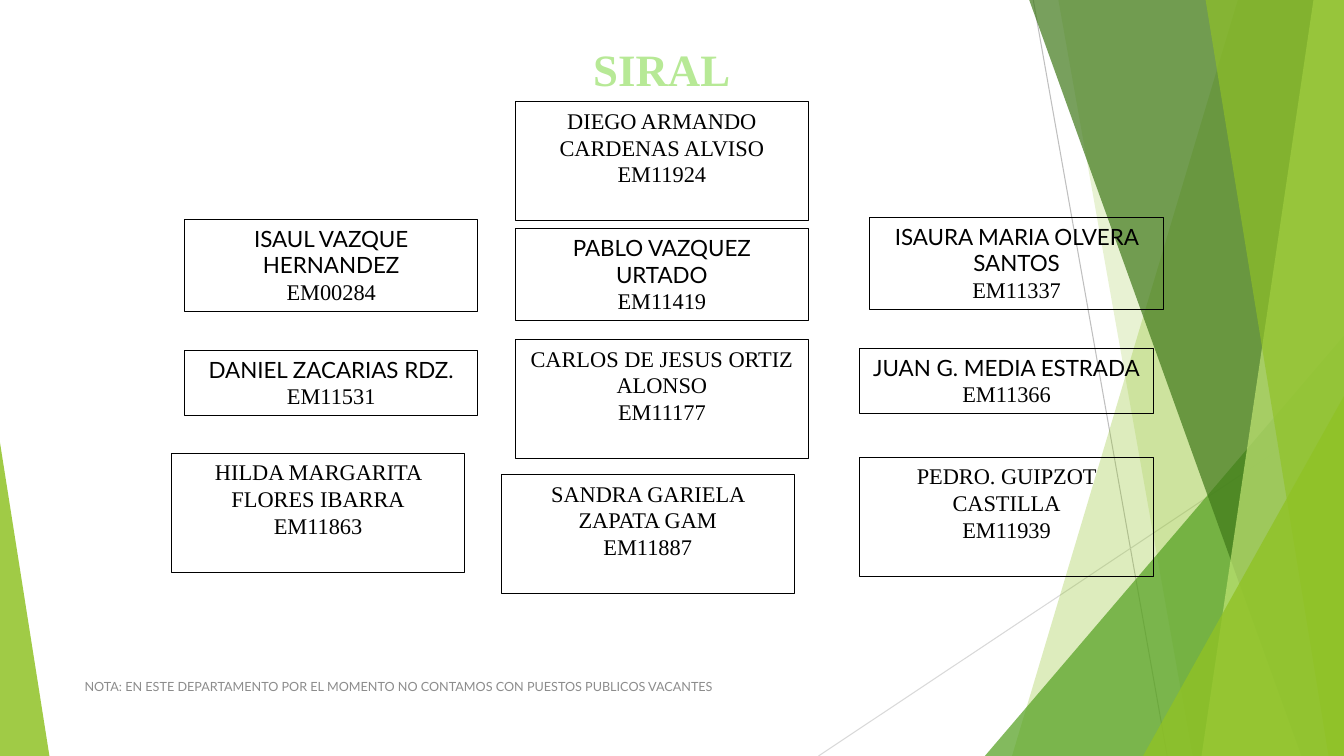
from dataclasses import dataclass

from lxml.etree import SubElement
from pptx import Presentation
from pptx.dml.color import RGBColor
from pptx.enum.shapes import MSO_CONNECTOR, MSO_SHAPE
from pptx.enum.text import MSO_ANCHOR, MSO_AUTO_SIZE, PP_ALIGN
from pptx.oxml.ns import qn
from pptx.shapes.autoshape import Shape
from pptx.slide import Slide
from pptx.text.text import TextFrame, _Paragraph
from pptx.util import Emu, Inches, Pt

WIDTH, HEIGHT = Inches(13.33), Inches(7.5)
SANS, SERIF = "Lato", "Times New Roman"
COLORS = {
    "lime": "90C226",
    "pale": "C0E474",
    "green": "54A021",
    "forest": "3F7819",
    "title": "B7E996",
    "note": "8C8C8C",
    "black": "000000",
    "gray": "BFBFBF",
    "silver": "D9D9D9",
}
CARD_WIDTH = 21.83
SHORT, MEDIUM, TALL = 8.53, 12.13, 15.73


@dataclass(frozen=True)
class Ray:
    start: tuple[float, float]
    end: tuple[float, float]
    color: str


@dataclass(frozen=True)
class Band:
    top_left: float
    bottom_left: float
    color: str
    opacity: int


@dataclass(frozen=True)
class Wedge:
    left: float
    top: float
    width: float
    apex: float
    color: str
    opacity: int


@dataclass(frozen=True)
class Card:
    left: float
    top: float
    height: float
    name: str
    code: str
    font: str


RAYS = [
    Ray((76.88, 0), (86.85, 100), "gray"),
    Ray((100, 53.73), (60.9, 100), "silver"),
]
FACETS = [
    Band(92.1, 75.3, "lime", 30),
    Band(78.75, 88.73, "lime", 20),
    Wedge(73.28, 44.4, 26.72, 1, "green", 72),
    Band(76.58, 96.83, "forest", 70),
    Band(97.73, 89.4, "pale", 70),
    Band(89.7, 98.85, "lime", 65),
    Wedge(85.05, 52.4, 14.95, 1, "lime", 80),
    Wedge(0, 58.53, 3.68, 0, "lime", 85),
]
CARDS = [
    Card(38.33, 13.47, TALL, "DIEGO ARMANDO CARDENAS ALVISO", "EM11924", SERIF),
    Card(13.73, 29.07, MEDIUM, "ISAUL VAZQUE HERNANDEZ", "EM00284", SANS),
    Card(38.33, 30.27, MEDIUM, "PABLO VAZQUEZ URTADO", "EM11419", SANS),
    Card(64.73, 28.8, MEDIUM, "ISAURA MARIA OLVERA SANTOS", "EM11337", SANS),
    Card(13.73, 46.4, SHORT, "DANIEL ZACARIAS RDZ.", "EM11531", SANS),
    Card(38.33, 44.93, TALL, "CARLOS DE JESUS ORTIZ ALONSO", "EM11177", SERIF),
    Card(63.98, 46.13, SHORT, "JUAN G. MEDIA ESTRADA", "EM11366", SANS),
    Card(12.75, 60, TALL, "HILDA MARGARITA FLORES IBARRA", "EM11863", SERIF),
    Card(37.28, 62.8, TALL, "SANDRA GARIELA ZAPATA GAM", "EM11887", SERIF),
    Card(63.98, 60.53, TALL, "PEDRO. GUIPZOT CASTILLA", "EM11939", SERIF),
]


def across(percent: float) -> Emu:
    return Emu(round(WIDTH * percent / 100))


def down(percent: float) -> Emu:
    return Emu(round(HEIGHT * percent / 100))


def color(name: str) -> RGBColor:
    return RGBColor.from_string(COLORS[name])


def draw_ray(page: Slide, ray: Ray) -> None:
    line = page.shapes.add_connector(
        MSO_CONNECTOR.STRAIGHT,
        across(ray.start[0]), down(ray.start[1]),
        across(ray.end[0]), down(ray.end[1]),
    )
    line.line.color.rgb = color(ray.color)
    line.line.width = Pt(0.75)
    SubElement(line._element.spPr, qn("a:effectLst"))


def draw_band(page: Slide, band: Band) -> Shape:
    outline = page.shapes.build_freeform(across(band.top_left), 0)
    outline.add_line_segments(
        [(WIDTH, 0), (WIDTH, HEIGHT), (across(band.bottom_left), HEIGHT)]
    )
    return outline.convert_to_shape()


def draw_wedge(page: Slide, wedge: Wedge) -> Shape:
    triangle = page.shapes.add_shape(
        MSO_SHAPE.ISOSCELES_TRIANGLE,
        across(wedge.left), down(wedge.top),
        across(wedge.width), down(100 - wedge.top),
    )
    triangle.adjustments[0] = wedge.apex
    return triangle


def draw_facet(page: Slide, facet: Band | Wedge) -> None:
    shape = draw_band(page, facet) if isinstance(facet, Band) else draw_wedge(page, facet)
    shape.shadow.inherit = False
    shape.line.fill.background()
    shape.fill.solid()
    shape.fill.fore_color.rgb = color(facet.color)
    tint = shape._element.spPr.find(qn("a:solidFill"))[0]
    SubElement(tint, qn("a:alpha"), val=str(facet.opacity * 1000))


def format_paragraph(para: _Paragraph, font: str, size: int, tone: str, align: PP_ALIGN) -> None:
    para.alignment = align
    for span in para.runs:
        span.font.name = font
        span.font.size = Pt(size)
        span.font.color.rgb = color(tone)


def set_frame(frame: TextFrame, text: str, anchor: MSO_ANCHOR) -> None:
    frame.text = text
    frame.word_wrap = True
    frame.auto_size = MSO_AUTO_SIZE.NONE
    frame.vertical_anchor = anchor


def draw_card(page: Slide, card: Card) -> None:
    box = page.shapes.add_shape(
        MSO_SHAPE.RECTANGLE,
        across(card.left), down(card.top), across(CARD_WIDTH), down(card.height),
    )
    box.shadow.inherit = False
    box.fill.background()
    box.line.color.rgb = color("black")
    box.line.width = Pt(0.75)
    set_frame(box.text_frame, f"{card.name}\n{card.code}", MSO_ANCHOR.TOP)
    for para, font in zip(box.text_frame.paragraphs, (card.font, SERIF)):
        format_paragraph(para, font, 16, "black", PP_ALIGN.CENTER)


def draw_title(page: Slide) -> None:
    title = page.shapes.title
    title.left, title.top = across(37.28), down(4.8)
    title.width, title.height = across(23.93), down(8.53)
    set_frame(title.text_frame, "SIRAL", MSO_ANCHOR.MIDDLE)
    para = title.text_frame.paragraphs[0]
    format_paragraph(para, SERIF, 32, "title", PP_ALIGN.CENTER)
    para.runs[0].font.bold = True


def draw_note(page: Slide) -> None:
    note = page.shapes.add_textbox(across(5.55), down(88.13), across(51.69), down(5.33))
    set_frame(
        note.text_frame,
        "NOTA: EN ESTE DEPARTAMENTO POR EL MOMENTO NO CONTAMOS CON PUESTOS PUBLICOS VACANTES",
        MSO_ANCHOR.MIDDLE,
    )
    format_paragraph(note.text_frame.paragraphs[0], SANS, 9, "note", PP_ALIGN.LEFT)


def main() -> None:
    deck = Presentation()
    deck.slide_width, deck.slide_height = WIDTH, HEIGHT
    page = deck.slides.add_slide(deck.slide_layouts.get_by_name("Title Only"))
    for ray in RAYS:
        draw_ray(page, ray)
    for facet in FACETS:
        draw_facet(page, facet)
    draw_title(page)
    draw_note(page)
    for card in CARDS:
        draw_card(page, card)
    deck.save("out.pptx")


if __name__ == "__main__":
    main()
